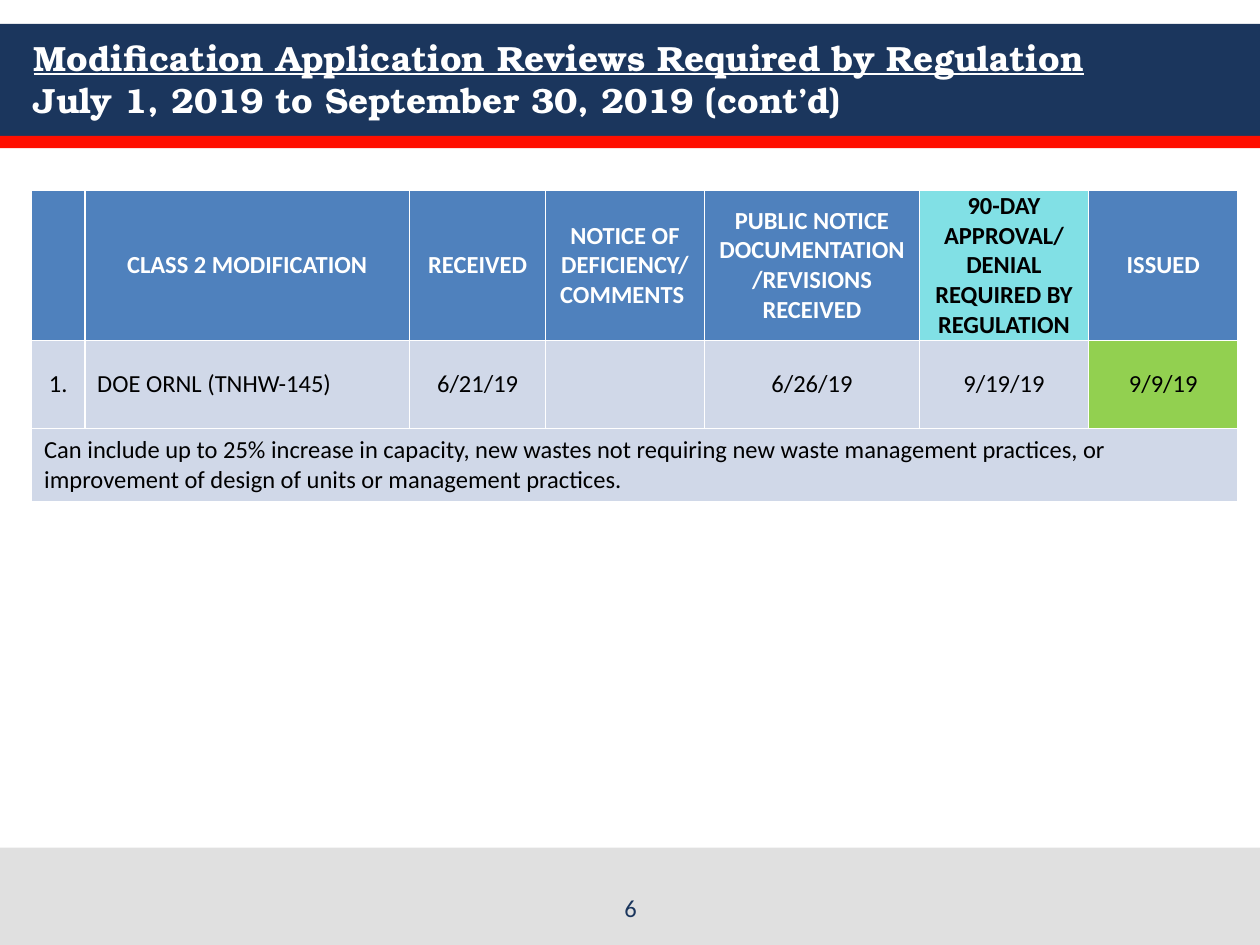
from lxml import etree
from pptx import Presentation, util as u
from pptx.dml.color import RGBColor
from pptx.enum import shapes, text
from pptx.oxml.ns import qn

THEME = dict(
    navy="1B365D", red="FF0F00", grey="E0E0E0", white="FFFFFF", black="000000",
    head="4F81BD", due="81E0E5", body="D0D8E8", done="92D050",
    title_font="TeX Gyre Bonum", font="Calibri", title_size=20, size=14,
)
TITLE = ["Modification Application Reviews Required by Regulation",
         "July 1, 2019 to September 30, 2019 (cont’d)"]
PAGE = "6"
HEADER = ["", "CLASS 2 MODIFICATION", "RECEIVED", "NOTICE OF DEFICIENCY/ COMMENTS ",
          "PUBLIC NOTICE DOCUMENTATION/REVISIONS RECEIVED",
          "90-DAY APPROVAL/ DENIAL\nREQUIRED BY REGULATION", "ISSUED"]
REVIEW = ["1.", "DOE ORNL (TNHW-145)", "6/21/19", "", "6/26/19", "9/19/19", "9/9/19"]
NOTE = ("Can include up to 25% increase in capacity, new wastes not requiring new waste "
        "management practices, or\nimprovement of design of units or management practices.")
BANDS = [(0.48, 2.26, "navy"), (2.74, 0.25, "red"), (17.09, 1.96, "grey")]  # top, height, fill
COLS = [1.07, 6.55, 2.74, 3.2, 4.34, 3.4, 3.02]
ROWS = [3.02, 1.78, 1.47]
NAME_COL, DUE_COL, ISSUED_COL = 1, 5, 6
CENTER, LEFT = text.PP_ALIGN.CENTER, text.PP_ALIGN.LEFT


def color(name):
    return RGBColor.from_string(THEME[name])


def style(r, ink="black", size="size", font="font", bold=False, underline=False):
    f = r.font
    f.name, f.size, f.bold, f.underline = THEME[font], u.Pt(THEME[size]), bold, underline
    f.color.rgb = color(ink)


def write(tf, content, align=LEFT, **fmt):
    """Put each line of content in its own paragraph."""
    tf.word_wrap = True
    for i, line in enumerate(content.split("\n")):
        p = tf.add_paragraph() if i else tf.paragraphs[0]
        p.alignment = align
        if line:
            r = p.add_run()
            r.text = line
            style(r, **fmt)
        else:
            style(p, **fmt)


def add_border(cell):
    tcPr = cell._tc.get_or_add_tcPr()
    for side in ("a:lnL", "a:lnR", "a:lnT", "a:lnB"):
        ln = etree.SubElement(tcPr, qn(side), w=str(u.Pt(1)))
        fill = etree.SubElement(ln, qn("a:solidFill"))
        etree.SubElement(fill, qn("a:srgbClr"), val=THEME["white"])


def fill_cell(cell, content, fill, margins=(0.25, 0.13), **fmt):
    """Margins are the side and the top/bottom inset in cm."""
    cell.vertical_anchor = text.MSO_ANCHOR.MIDDLE
    cell.margin_left = cell.margin_right = u.Cm(margins[0])
    cell.margin_top = cell.margin_bottom = u.Cm(margins[1])
    add_border(cell)
    cell.fill.solid()
    cell.fill.fore_color.rgb = color(fill)
    write(cell.text_frame, content, **fmt)


def add_bands(s, width):
    for top, height, fill in BANDS:
        sp = s.shapes.add_shape(shapes.MSO_SHAPE.RECTANGLE, 0, u.Cm(top), width, u.Cm(height))
        sp.shadow.inherit = False
        sp.fill.solid()
        sp.fill.fore_color.rgb = color(fill)
        sp.line.fill.background()


def add_title(s):
    tf = s.shapes.add_textbox(u.Cm(0.43), u.Cm(0.43), u.Cm(24.56), u.Cm(2.29)).text_frame
    tf.vertical_anchor = text.MSO_ANCHOR.MIDDLE
    fmt = dict(ink="white", size="title_size", font="title_font", bold=True)
    write(tf, TITLE[0], underline=True, **fmt)
    p = tf.paragraphs[0]
    p.add_line_break()
    r = p.add_run()
    r.text = TITLE[1]
    style(r, **fmt)


def add_reviews(s):
    table = s.shapes.add_table(len(ROWS), len(COLS), u.Cm(0.64), u.Cm(3.84),
                               u.Cm(sum(COLS)), u.Cm(sum(ROWS))).table
    table.first_row = table.horz_banding = False
    for col, width in zip(table.columns, COLS):
        col.width = u.Cm(width)
    for row, height in zip(table.rows, ROWS):
        row.height = u.Cm(height)
    for c, (heading, value) in enumerate(zip(HEADER, REVIEW)):
        due = c == DUE_COL
        fill_cell(table.cell(0, c), heading, "due" if due else "head", margins=(0.2, 0),
                  align=CENTER, ink="black" if due else "white", bold=True)
        fill_cell(table.cell(1, c), value, "done" if c == ISSUED_COL else "body",
                  align=LEFT if c == NAME_COL else CENTER)
    note = table.cell(2, 0)
    note.merge(table.cell(2, len(COLS) - 1))
    fill_cell(note, NOTE, "body")


def main():
    prs = Presentation()
    prs.slide_width, prs.slide_height = u.Cm(25.4), u.Cm(19.05)
    s = prs.slides.add_slide(prs.slide_layouts[6])
    add_bands(s, prs.slide_width)
    add_title(s)
    add_reviews(s)
    tf = s.shapes.add_textbox(u.Cm(8.69), u.Cm(17.7), u.Cm(8.05), u.Cm(1.02)).text_frame
    tf.vertical_anchor = text.MSO_ANCHOR.BOTTOM
    write(tf, PAGE, align=CENTER, ink="navy")
    prs.save("out.pptx")


if __name__ == "__main__":
    main()
